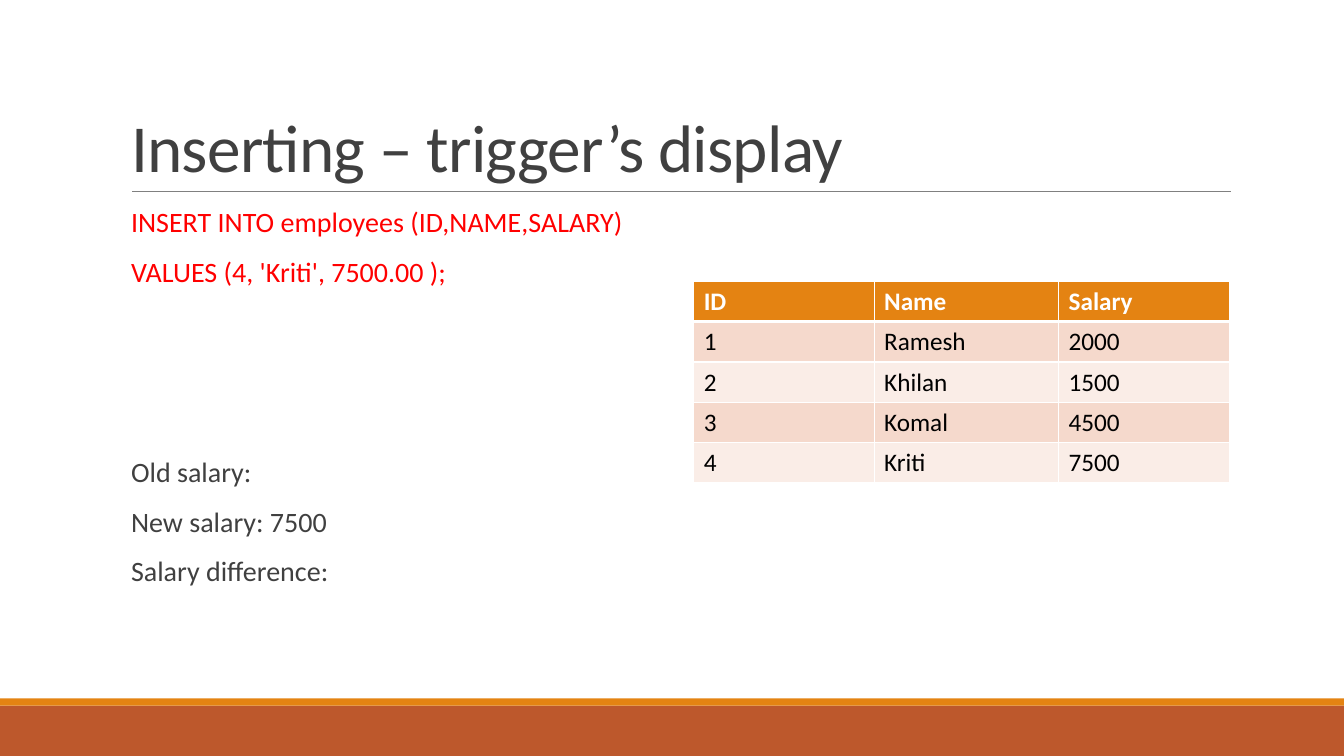
from dataclasses import dataclass

from lxml import etree
from pptx import Presentation
from pptx import util as u
from pptx.dml.color import RGBColor
from pptx.enum import shapes, text
from pptx.oxml import ns

FONT = "Calibri"
COLORS = {
    "rust": "BD582C",
    "orange": "E48312",
    "gray": "808080",
    "dark": "404040",
    "red": "FF0000",
    "white": "FFFFFF",
    "black": "000000",
    "odd_row": "F5D9CC",
    "even_row": "FAEDE7",
}
COLUMN_WIDTHS = (1.79, 1.83, 1.7)
ROW_HEIGHT = 0.4
EMPLOYEES = (
    ("ID", "Name", "Salary"),
    ("1", "Ramesh", "2000"),
    ("2", "Khilan", "1500"),
    ("3", "Komal", "4500"),
    ("4", "Kriti", "7500"),
)


@dataclass(frozen=True)
class Band:
    top: float
    height: float
    color: str


@dataclass(frozen=True)
class Line:
    words: str
    color: str
    size: float = 20
    spacing: float = 0.9
    before: float = 12
    after: float = 2
    tracking: int = 0


BANDS = (Band(7, 0.5, "rust"), Band(6.93, 0.07, "orange"))
TITLE = Line("Inserting – trigger’s display", "dark", 48, 0.85, 0, 0, -50)
BODY = (
    Line("INSERT INTO employees (ID,NAME,SALARY)", "red"),
    Line("VALUES (4, 'Kriti', 7500.00 );", "red"),
    Line("Old salary:", "dark", before=119),
    Line("New salary: 7500", "dark"),
    Line("Salary difference:", "dark"),
)


def rgb(name: str) -> RGBColor:
    return RGBColor.from_string(COLORS[name])


def style_font(font, size: float, color: str, bold: bool = False) -> None:
    font.name = FONT
    font.size = u.Pt(size)
    font.bold = bold
    font.color.rgb = rgb(color)


def add_band(page, band: Band, width: int) -> None:
    bar = page.shapes.add_shape(
        shapes.MSO_SHAPE.RECTANGLE, 0, u.Inches(band.top), width, u.Inches(band.height)
    )
    bar.shadow.inherit = False
    bar.fill.solid()
    bar.fill.fore_color.rgb = rgb(band.color)
    bar.line.fill.background()


def add_rule(page) -> None:
    rule = page.shapes.add_connector(
        shapes.MSO_CONNECTOR.STRAIGHT,
        u.Inches(1.31), u.Inches(1.9), u.Inches(12.21), u.Inches(1.9),
    )
    rule.line.color.rgb = rgb("gray")
    rule.line.width = u.Pt(0.5)
    etree.SubElement(rule._element.spPr, ns.qn("a:effectLst"))


def add_text(page, left: float, top: float, width: float, height: float,
             lines: tuple[Line, ...], anchor: text.MSO_ANCHOR) -> None:
    box = page.shapes.add_textbox(
        u.Inches(left), u.Inches(top), u.Inches(width), u.Inches(height)
    )
    frame = box.text_frame
    frame.word_wrap = True
    frame.vertical_anchor = anchor
    frame.margin_left = frame.margin_right = 0
    frame.text = "\n".join(line.words for line in lines)
    for para, line in zip(frame.paragraphs, lines):
        para.line_spacing = line.spacing
        para.space_before = u.Pt(line.before)
        para.space_after = u.Pt(line.after)
        for span in para.runs:
            style_font(span.font, line.size, line.color)
            if line.tracking:
                span.font._element.set("spc", str(line.tracking))


def set_borders(cell, header: bool) -> None:
    properties = cell._tc.get_or_add_tcPr()
    weights = {"lnL": 1, "lnR": 1, "lnT": 1, "lnB": 3 if header else 1}
    for position, (side, points) in enumerate(weights.items()):
        border = etree.Element(ns.qn(f"a:{side}"), w=str(u.Pt(points)))
        fill = etree.SubElement(border, ns.qn("a:solidFill"))
        etree.SubElement(fill, ns.qn("a:srgbClr"), val=COLORS["white"])
        properties.insert(position, border)


def add_employees(page) -> None:
    frame = page.shapes.add_table(
        len(EMPLOYEES), len(COLUMN_WIDTHS), u.Inches(6.88), u.Inches(2.79),
        u.Inches(sum(COLUMN_WIDTHS)), u.Inches(ROW_HEIGHT * len(EMPLOYEES)),
    )
    table = frame.table
    for column, width in zip(table.columns, COLUMN_WIDTHS):
        column.width = u.Inches(width)
    for row, record in enumerate(EMPLOYEES):
        table.rows[row].height = u.Inches(ROW_HEIGHT)
        header = row == 0
        shade = "orange" if header else ("odd_row" if row % 2 else "even_row")
        for column, value in enumerate(record):
            cell = table.cell(row, column)
            cell.text_frame.text = value
            cell.fill.solid()
            cell.fill.fore_color.rgb = rgb(shade)
            set_borders(cell, header)
            span = cell.text_frame.paragraphs[0].runs[0]
            style_font(span.font, 18, "white" if header else "black", header)


def main() -> None:
    deck = Presentation()
    deck.slide_width = u.Inches(13.33)
    deck.slide_height = u.Inches(7.5)
    page = deck.slides.add_slide(deck.slide_layouts[6])
    for band in BANDS:
        add_band(page, band, deck.slide_width)
    add_rule(page)
    add_text(page, 1.3, 0.31, 10.8, 1.59, (TITLE,), text.MSO_ANCHOR.BOTTOM)
    add_text(page, 1.3, 2.02, 10.9, 4.4, BODY, text.MSO_ANCHOR.TOP)
    add_employees(page)
    deck.save("out.pptx")


if __name__ == "__main__":
    main()
